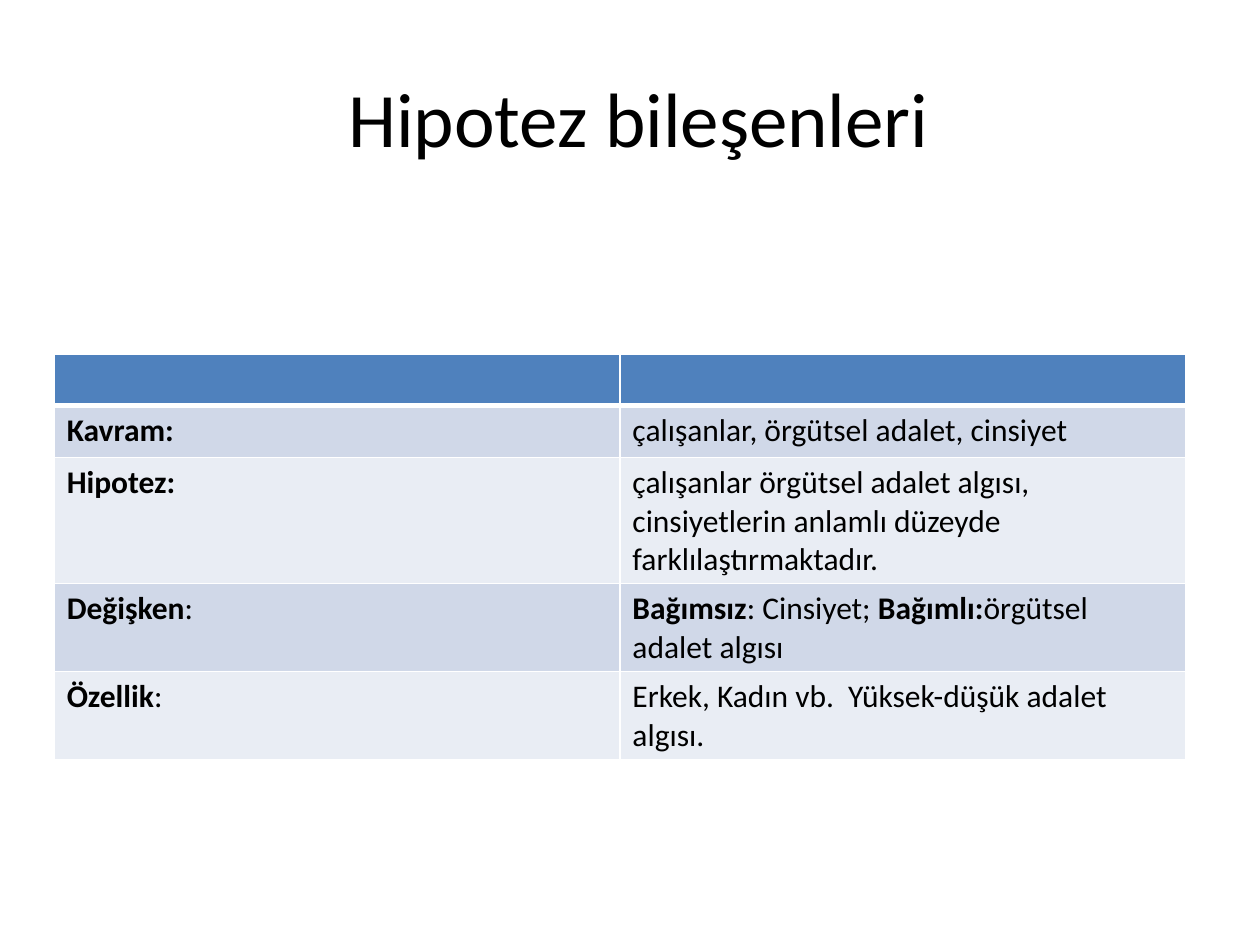
from lxml.etree import SubElement
from pptx import Presentation
from pptx.dml.color import RGBColor
from pptx.enum.text import MSO_ANCHOR, PP_ALIGN
from pptx.oxml.ns import qn
from pptx.util import Inches, Pt

HEADER_FILL = "4F81BD"
BAND_FILLS = ("D0D8E8", "E9EDF4")
ROWS = [
    ([("Kavram:", True)], [("çalışanlar, örgütsel adalet, cinsiyet", False)]),
    (
        [("Hipotez:", True)],
        [("çalışanlar örgütsel adalet algısı, cinsiyetlerin anlamlı düzeyde "
          "farklılaştırmaktadır.", False)],
    ),
    (
        [("Değişken", True), (":", False)],
        [("Bağımsız", True), (": Cinsiyet; ", False),
         ("Bağımlı:", True), ("örgütsel adalet algısı", False)],
    ),
    (
        [("Özellik", True), (":", False)],
        [("Erkek, Kadın vb.  Yüksek-düşük adalet algısı.", False)],
    ),
]


def color(hex_value):
    """Return the colour for a hex string."""
    return RGBColor.from_string(hex_value)


def add_text(paragraph, text, size=18, bold=False, fill="000000", font="Calibri"):
    """Add a formatted run to a paragraph."""
    run = paragraph.add_run()
    run.text = text
    run.font.name = font
    run.font.size = Pt(size)
    run.font.bold = bold
    run.font.color.rgb = color(fill)


def add_title(slide, text):
    """Add the centred slide title."""
    shape = slide.shapes.add_textbox(Inches(0.5), Inches(0.3), Inches(9), Inches(1.25))
    frame = shape.text_frame
    frame.word_wrap = True
    frame.vertical_anchor = MSO_ANCHOR.MIDDLE
    paragraph = frame.paragraphs[0]
    paragraph.alignment = PP_ALIGN.CENTER
    add_text(paragraph, text, size=44)


def set_borders(cell, top=1, bottom=1):
    """Give a cell white borders with the given top and bottom widths."""
    properties = cell._tc.get_or_add_tcPr()
    for side, width in (("L", 1), ("R", 1), ("T", top), ("B", bottom)):
        line = SubElement(properties, qn(f"a:ln{side}"), w=str(Pt(width)))
        fill = SubElement(line, qn("a:solidFill"))
        SubElement(fill, qn("a:srgbClr"), val="FFFFFF")


def style_cell(cell, fill, top=1, bottom=1):
    """Set the borders and fill of a cell."""
    set_borders(cell, top, bottom)
    cell.fill.solid()
    cell.fill.fore_color.rgb = color(fill)


def add_component_table(slide):
    """Add the table of hypothesis components under an empty header row."""
    row_height = Inches(0.41)
    row_count = len(ROWS) + 1
    table = slide.shapes.add_table(
        row_count, 2, Inches(0.43), Inches(2.81), Inches(8.98), row_height * row_count
    ).table
    for cell in table.rows[0].cells:
        style_cell(cell, HEADER_FILL, bottom=3)
        cell.text_frame.paragraphs[0].font.size = Pt(18)
    for index, contents in enumerate(ROWS):
        for cell, runs in zip(table.rows[index + 1].cells, contents):
            style_cell(cell, BAND_FILLS[index % 2], top=3 if index == 0 else 1)
            for text, bold in runs:
                add_text(cell.text_frame.paragraphs[0], text, bold=bold)


def main():
    """Build and save the presentation."""
    presentation = Presentation()
    presentation.slide_width = Inches(10)
    presentation.slide_height = Inches(7.5)
    slide = presentation.slides.add_slide(presentation.slide_layouts[6])
    add_title(slide, " Hipotez bileşenleri")
    add_component_table(slide)
    presentation.save("out.pptx")


if __name__ == "__main__":
    main()
